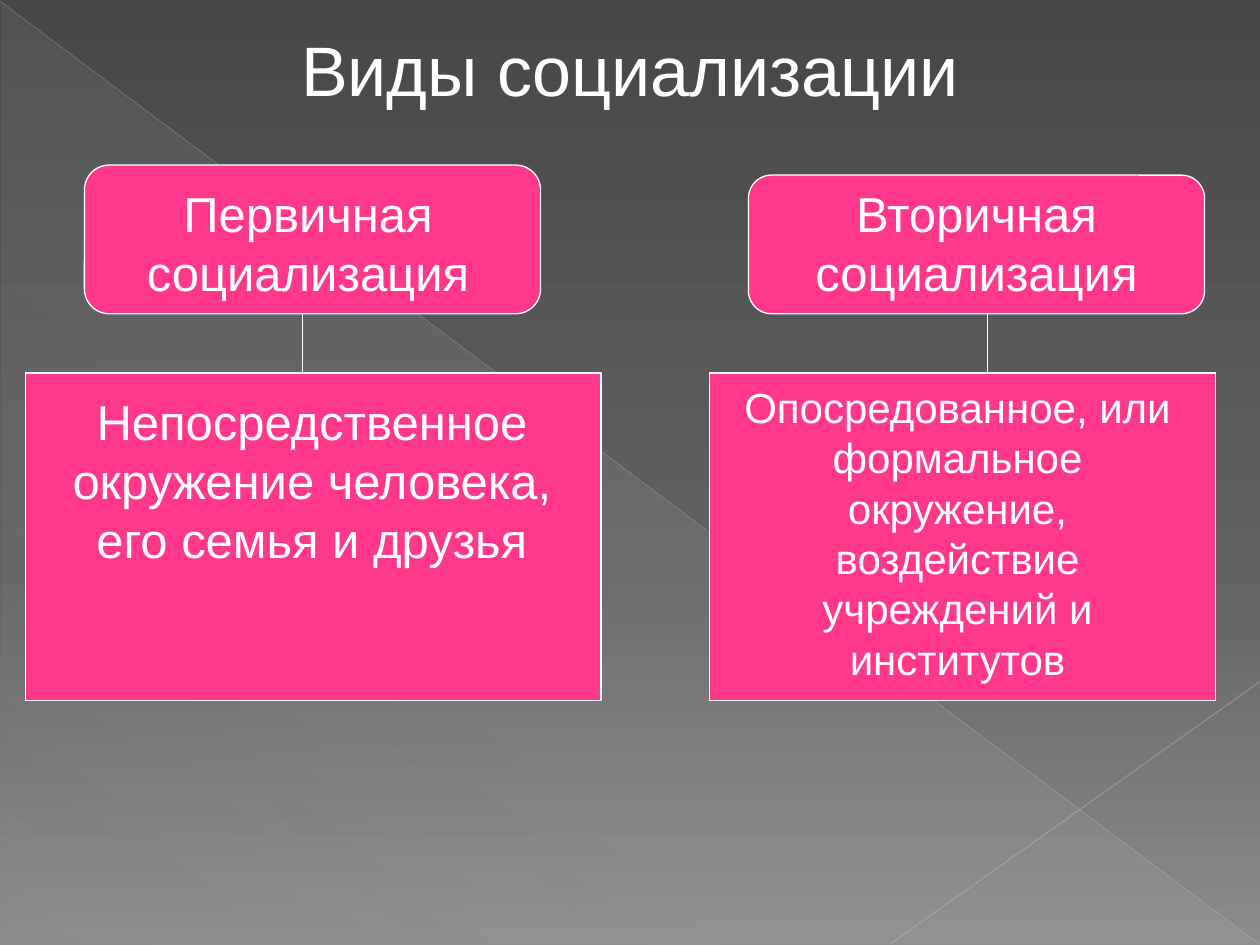
from lxml.etree import SubElement
from pptx import Presentation
from pptx.dml.color import RGBColor
from pptx.enum.shapes import MSO_CONNECTOR as CONN, MSO_SHAPE as SHAPE
from pptx.enum.text import PP_ALIGN as ALIGN
from pptx.oxml.ns import qn
from pptx.util import Inches, Pt

WIDTH, HEIGHT = Inches(10), Inches(7.5)
FONT = "Arial"
COLORS = {
    "top": "474747", "middle": "626262", "bottom": "8C8C8C",
    "veil": "D2D2D2", "diagonal": "BFBFBF", "corner": "C6C6C6",
    "box": "FF388C", "white": "FFFFFF",
}
# Rows of the diagram, in percent of the slide height
HEAD_BOTTOM, BODY_TOP, BODY_HEIGHT = 33.2, 39.47, 34.67


def px(share):
    return round(WIDTH * share / 100)


def py(share):
    return round(HEIGHT * share / 100)


def place(left, top, width, height):
    """Turn percentages of the slide into lengths."""
    return px(left), py(top), px(width), py(height)


def rgb(name):
    return RGBColor.from_string(COLORS[name])


def set_alpha(color_el, percent):
    SubElement(color_el, qn("a:alpha")).set("val", str(percent * 1000))


def set_gradient(fill, root, stops, angle):
    """Fill with (position, colour, opacity) stops at a clockwise angle."""
    fill.gradient()
    fill.gradient_angle = 360 - angle
    stop_list = next(root.iter(qn("a:gsLst")))
    for old in list(stop_list):
        stop_list.remove(old)
    for position, color, opacity in stops:
        gs = SubElement(stop_list, qn("a:gs"))
        gs.set("pos", str(position * 1000))
        clr = SubElement(gs, qn("a:srgbClr"))
        clr.set("val", COLORS[color])
        if opacity < 100:
            set_alpha(clr, opacity)


def add_line(s, start, end, color="white", width=0.75, opacity=100):
    line = s.shapes.add_connector(
        CONN.STRAIGHT, px(start[0]), py(start[1]), px(end[0]), py(end[1]))
    line.line.color.rgb = rgb(color)
    line.line.width = Pt(width)
    if opacity < 100:
        set_alpha(next(line._element.spPr.iter(qn("a:srgbClr"))), opacity)
    SubElement(line._element.spPr, qn("a:effectLst"))


def add_box(s, kind, area):
    sp = s.shapes.add_shape(kind, *place(*area))
    sp.shadow.inherit = False
    sp.fill.solid()
    sp.fill.fore_color.rgb = rgb("box")
    sp.line.color.rgb = rgb("white")
    sp.line.width = Pt(0.75)


def add_text(s, text, area, size):
    tf = s.shapes.add_textbox(*place(*area)).text_frame
    tf.word_wrap = True
    tf.margin_top = Inches(0.05) + Pt(size * 0.05)
    p = tf.paragraphs[0]
    p.text = text
    p.alignment = ALIGN.CENTER
    p.line_spacing = Pt(size * 1.2)
    font = p.runs[0].font
    font.name, font.size = FONT, Pt(size)
    font.color.rgb = rgb("white")


def add_backdrop(s):
    set_gradient(s.background.fill, s._element,
                 [(0, "top", 100), (60, "middle", 100), (100, "bottom", 100)], 90)
    veil = s.shapes.add_shape(SHAPE.RIGHT_TRIANGLE, *place(0.1, 0.27, 99.9, 99.73))
    veil.shadow.inherit = False
    veil.line.fill.background()
    set_gradient(veil.fill, veil._element,
                 [(0, "veil", 10), (70, "veil", 8), (100, "veil", 1)], 133)
    add_line(s, (0, 0.13), (99.9, 99.87), "diagonal", 0.39, 35)
    add_line(s, (100, 72.13), (70.7, 99.87), "corner", 0.47, 45)


def add_branch(s, head_box, head, body_box, body, stem):
    """Draw a rounded heading, a stem and the explanation below it."""
    left, top, width = head_box
    add_box(s, SHAPE.ROUNDED_RECTANGLE, (left, top, width, HEAD_BOTTOM - top))
    add_text(s, *head)
    left, width = body_box
    add_box(s, SHAPE.RECTANGLE, (left, BODY_TOP, width, BODY_HEIGHT))
    add_text(s, *body)
    add_line(s, (stem, HEAD_BOTTOM), (stem, BODY_TOP))


def main():
    prs = Presentation()
    prs.slide_width, prs.slide_height = WIDTH, HEIGHT
    s = prs.slides.add_slide(prs.slide_layouts[6])
    add_backdrop(s)
    add_text(s, "Виды социализации", (10.6, 1.73, 78.8, 10.27), 40)
    add_branch(
        s, (6.7, 17.47, 36.2),
        ("Первичная социализация", (8.3, 18.53, 32.3, 13.73), 28),
        (2, 45.7),
        ("Непосредственное окружение человека, его семья и друзья",
         (2.7, 40.53, 44.1, 20), 28),
        stem=24)
    add_branch(
        s, (59.4, 18.53, 36.2),
        ("Вторичная социализация", (60.2, 18.53, 34.6, 13.73), 28),
        (56.3, 40.2),
        ("Опосредованное, или формальное окружение, "
         "воздействие учреждений и институтов",
         (56.3, BODY_TOP, 39.4, 33.33), 24),
        stem=78.4)
    prs.save("out.pptx")


if __name__ == "__main__":
    main()
